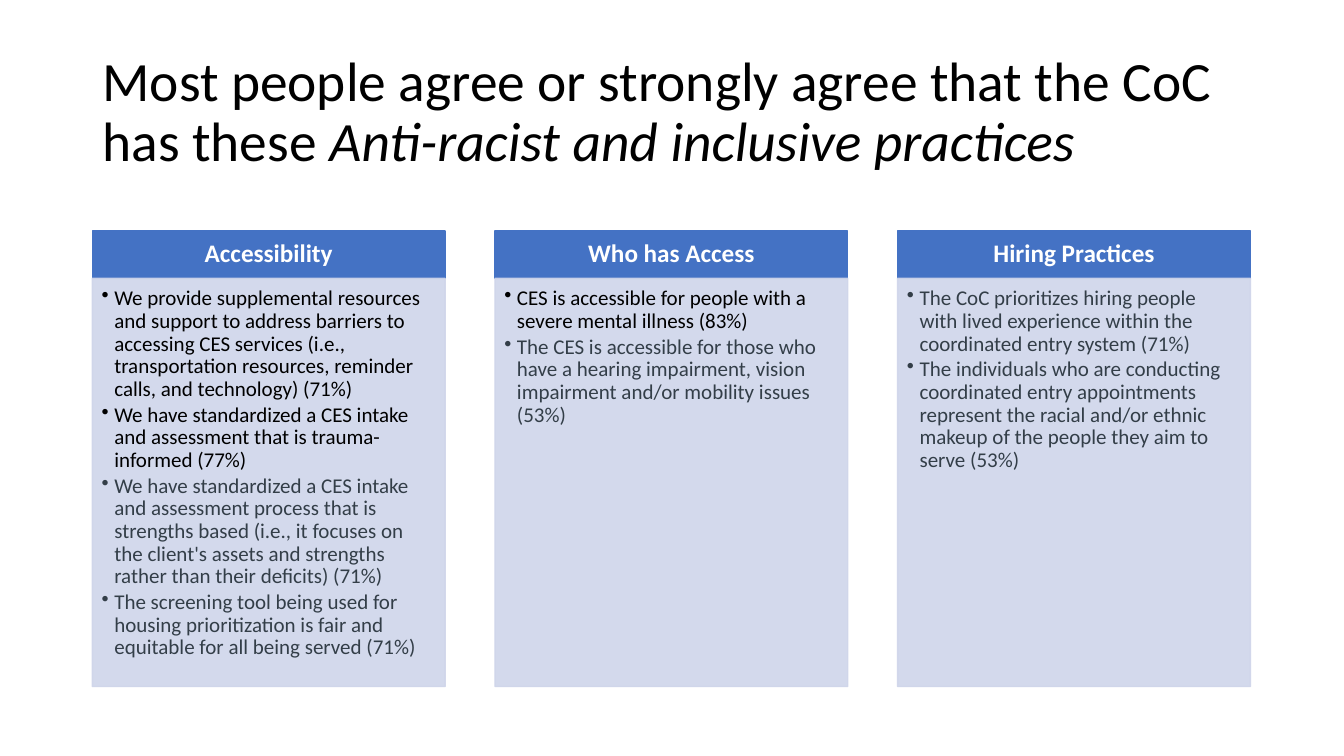
from dataclasses import dataclass

from lxml import etree
from pptx import Presentation
from pptx.dml.color import RGBColor
from pptx.enum.shapes import MSO_SHAPE
from pptx.enum.text import MSO_ANCHOR, MSO_AUTO_SIZE, PP_ALIGN
from pptx.oxml.ns import qn
from pptx.util import Pt

RECT = MSO_SHAPE.RECTANGLE
TOP, MIDDLE = MSO_ANCHOR.TOP, MSO_ANCHOR.MIDDLE
LEFT, CENTER = PP_ALIGN.LEFT, PP_ALIGN.CENTER
NO_FIT = MSO_AUTO_SIZE.NONE

FONT = "Calibri"
BLACK, WHITE, SLATE = "000000", "FFFFFF", "333E48"
BLUE, PALE = "4472C4", "CFD5EA"

EDGE, STEP, WIDTH = 66, 287.6, 252
HEAD_TOP, HEAD_TALL, BODY_TALL = 165, 33.8, 291.6
INDENT = 9


@dataclass
class Point:
    text: str
    color: str = SLATE


@dataclass
class Column:
    title: str
    points: list[Point]


COLUMNS = [
    Column("Accessibility", [
        Point("We provide supplemental resources and support to address barriers to "
              "accessing CES services (i.e., transportation resources, reminder calls, "
              "and technology) (71%)", BLACK),
        Point("We have standardized a CES intake and assessment that is "
              "trauma-informed (77%)", BLACK),
        Point("We have standardized a CES intake and assessment process that is "
              "strengths based (i.e., it focuses on the client's assets and strengths "
              "rather than their deficits) (71%)"),
        Point("The screening tool being used for housing prioritization is fair and "
              "equitable for all being served (71%)"),
    ]),
    Column("Who has Access", [
        Point("CES is accessible for people with a severe mental illness (83%)", BLACK),
        Point("The CES is accessible for those who have a hearing impairment, vision "
              "impairment and/or mobility issues (53%)"),
    ]),
    Column("Hiring Practices", [
        Point("The CoC prioritizes hiring people with lived experience within the "
              "coordinated entry system (71%)"),
        Point("The individuals who are conducting coordinated entry appointments "
              "represent the racial and/or ethnic makeup of the people they aim to "
              "serve (53%)"),
    ]),
]


def paint(target, color: str) -> None:
    target.rgb = RGBColor.from_string(color)


def write(par, text: str, *, size: float, color: str, bold: bool = False,
          italic: bool = False, align=LEFT, after: float = 0,
          bullet: bool = False) -> None:
    par.alignment = align
    par.line_spacing = 0.9
    par.space_after = Pt(after)
    run = par.add_run()
    run.text = text
    font = run.font
    font.name, font.size, font.bold, font.italic = FONT, Pt(size), bold, italic
    paint(font.color, color)
    if bullet:
        props = par._p.get_or_add_pPr()
        props.set("marL", str(Pt(INDENT)))
        props.set("indent", str(Pt(-INDENT)))
        etree.SubElement(props, qn("a:buChar")).set("char", "•")


def set_frame(frame, anchor, pads: tuple[float, float, float, float]) -> None:
    frame.word_wrap = True
    frame.auto_size = NO_FIT
    frame.vertical_anchor = anchor
    (frame.margin_left, frame.margin_top,
     frame.margin_right, frame.margin_bottom) = map(Pt, pads)


def add_box(slide, left: float, top: float, tall: float, color: str,
            alpha: int = 100):
    box = slide.shapes.add_shape(RECT, Pt(left), Pt(top), Pt(WIDTH), Pt(tall))
    box.shadow.inherit = False
    box.fill.solid()
    paint(box.fill.fore_color, color)
    paint(box.line.color, color)
    box.line.width = Pt(1)
    if alpha < 100:
        for tint in box._element.spPr.iter(qn("a:srgbClr")):
            etree.SubElement(tint, qn("a:alpha")).set("val", str(alpha * 1000))
    return box


def add_column(slide, column: Column, left: float) -> None:
    head = add_box(slide, left, HEAD_TOP, HEAD_TALL, BLUE).text_frame
    set_frame(head, MIDDLE, (10, 6, 10, 6))
    write(head.paragraphs[0], column.title, size=18, color=WHITE, bold=True,
          align=CENTER)
    body = add_box(slide, left, HEAD_TOP + HEAD_TALL, BODY_TALL, PALE, 90).text_frame
    set_frame(body, TOP, (6.7, 6.7, 9, 10))
    for i, point in enumerate(column.points):
        par = body.add_paragraph() if i else body.paragraphs[0]
        write(par, point.text, size=15, color=point.color, after=2, bullet=True)


def add_title(slide) -> None:
    title = slide.shapes.title
    title.left, title.top, title.width, title.height = map(Pt, (66, 28.8, 828, 104.4))
    set_frame(title.text_frame, MIDDLE, (7.2, 3.6, 7.2, 3.6))
    par = title.text_frame.paragraphs[0]
    write(par, "Most people agree or strongly agree that the CoC has these ",
          size=39.6, color=BLACK)
    write(par, "Anti-racist and inclusive practices", size=39.6, color=BLACK,
          italic=True)


def main() -> None:
    deck = Presentation()
    deck.slide_width, deck.slide_height = Pt(960), Pt(540)
    slide = deck.slides.add_slide(deck.slide_layouts[5])
    add_title(slide)
    for i, column in enumerate(COLUMNS):
        add_column(slide, column, EDGE + i * STEP)
    deck.save("out.pptx")


if __name__ == "__main__":
    main()
